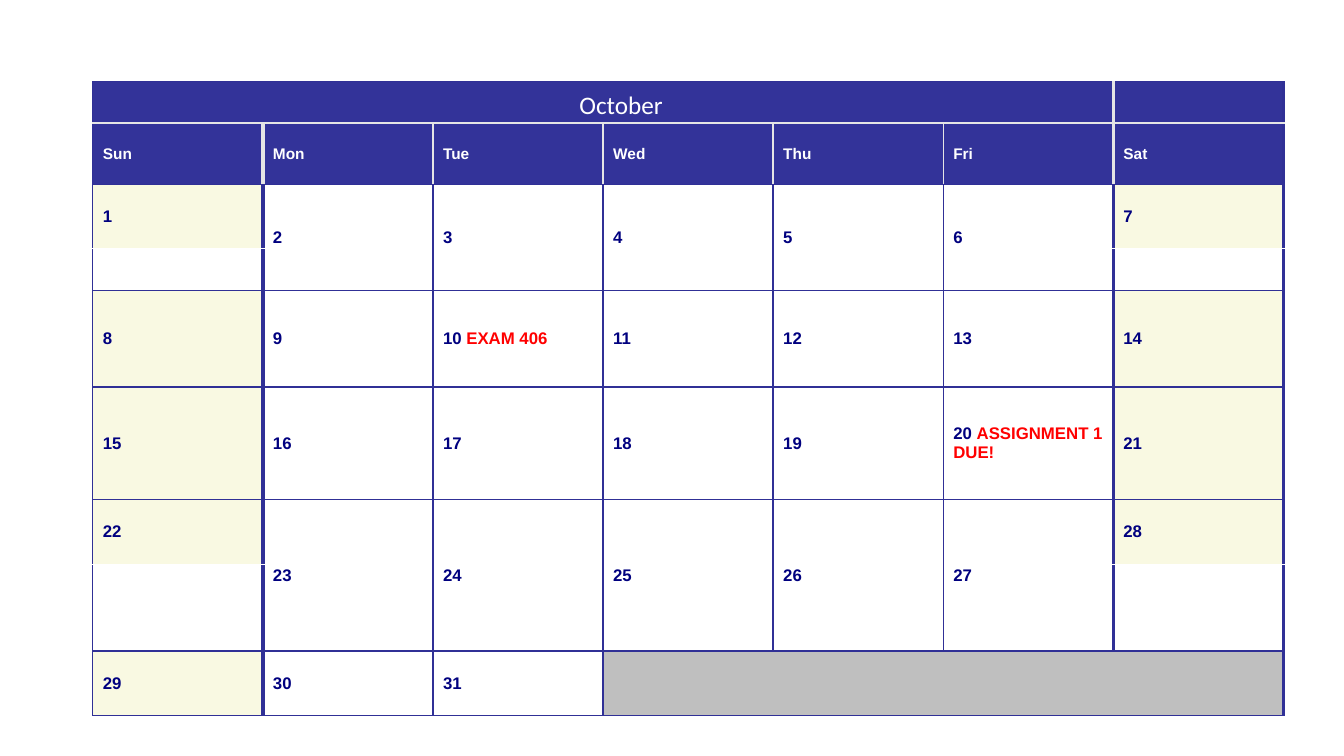
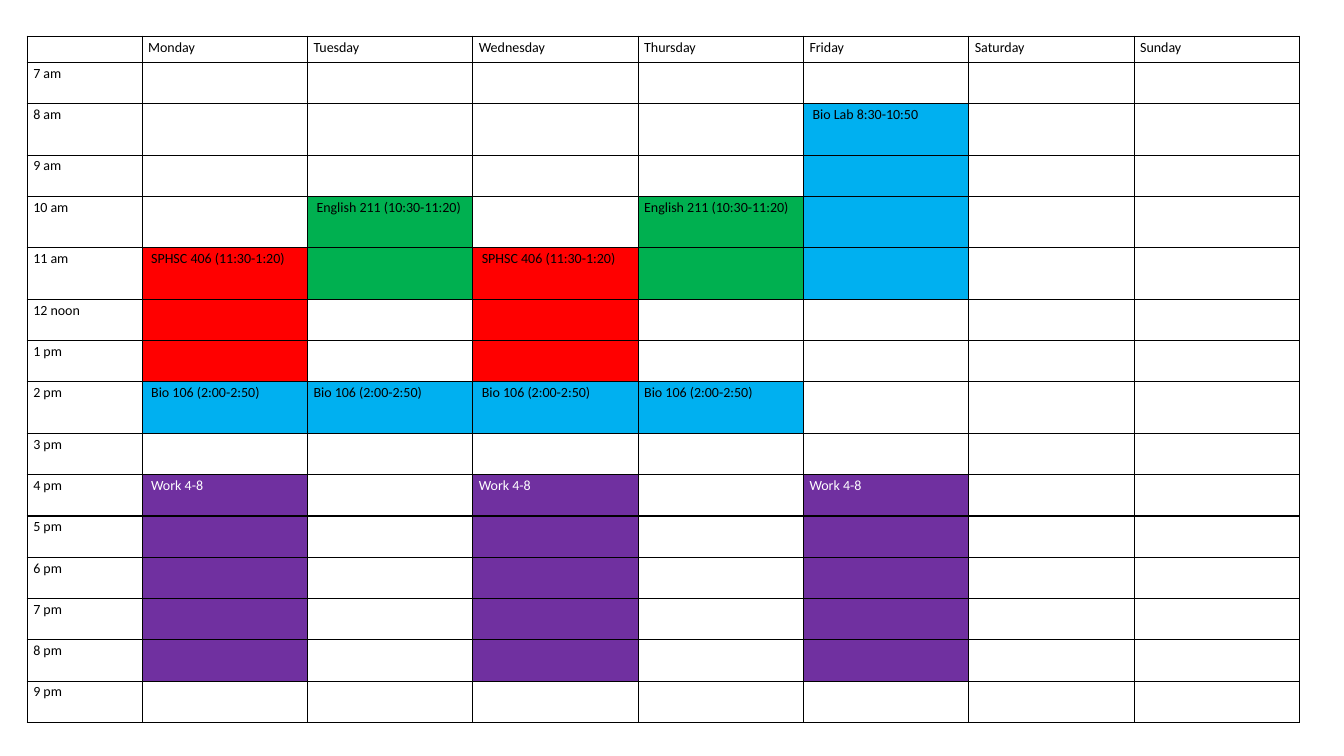
from dataclasses import dataclass
from itertools import product
from typing import NamedTuple

from lxml.etree import SubElement
from pptx import Presentation
from pptx.dml.color import RGBColor
from pptx.enum.text import MSO_ANCHOR as Anchor, PP_ALIGN as Align
from pptx.oxml import parse_xml
from pptx.oxml.ns import nsdecls, qn
from pptx.util import Inches, Pt

NAVY, HEADER, INK = "303096", "333399", "00007F"
PALE, GRAY, CREAM = "E5E5E5", "BFBFBF", "F9F9E2"
WHITE, BLACK, RED = "FFFFFF", "000000", "FF0000"
BLUE, GREEN, PURPLE = "00B0F0", "00B050", "7030A0"

DAY_NAMES = ["Sun", "Mon", "Tue", "Wed", "Thu", "Fri", "Sat"]
CALENDAR_HEIGHTS = [0.41, 0.61, 0.64, 0.41, 0.96, 1.12, 0.64, 0.86, 0.64]
CALENDAR_EDGES = [1.08, 3.6, 1.08, 1.08, 1.08, 1.08, 1.93, 2.52]
WEEK_ROWS = [2, 4, 5, 6, 8]
SPLIT_ROWS = [2, 6]
LAST_DAY = 31
DEADLINES = {10: "EXAM 406", 20: "ASSIGNMENT 1 DUE!"}

WEEK = ["Monday", "Tuesday", "Wednesday", "Thursday", "Friday", "Saturday", "Sunday"]
HOURS = ["7 am", "8 am", "9 am", "10 am", "11 am", "12 noon", "1 pm", "2 pm",
         "3 pm", "4 pm", "5 pm", "6 pm", "7 pm", "8 pm", "9 pm"]
TALL_HOURS = ["8 am", "10 am", "11 am", "2 pm"]


class Edge(NamedTuple):
    color: str
    width: float


@dataclass
class Style:
    size: float
    color: str
    name: str = "Arial"
    bold: bool = False


@dataclass
class Event:
    label: str
    days: list[str]
    start: str
    hours: int
    fill: str
    indented: list[str]
    ink: str = BLACK


EVENTS = [
    Event("Bio Lab 8:30-10:50", ["Friday"], "8 am", 4, BLUE, ["Friday"]),
    Event("English 211 (10:30-11:20)", ["Tuesday", "Thursday"], "10 am", 2, GREEN,
          ["Tuesday"]),
    Event("SPHSC 406 (11:30-1:20)", ["Monday", "Wednesday"], "11 am", 3, RED,
          ["Monday", "Wednesday"]),
    Event("Bio 106 (2:00-2:50)", WEEK[:4], "2 pm", 1, BLUE, ["Monday", "Wednesday"]),
    Event("Work 4-8", ["Monday", "Wednesday", "Friday"], "4 pm", 5, PURPLE,
          ["Monday"], WHITE),
]


def rgb(color: str) -> RGBColor:
    return RGBColor.from_string(color)


def add_run(p, text: str, style: Style) -> None:
    r = p.add_run()
    r.text = text
    values = {"size": Pt(style.size), "name": style.name, "bold": style.bold}
    for key, value in values.items():
        setattr(r.font, key, value)
    r.font.color.rgb = rgb(style.color)


def fill_cell(cell, color: str) -> None:
    cell.fill.solid()
    cell.fill.fore_color.rgb = rgb(color)


def set_borders(cell, left: Edge, right: Edge, top: Edge, bottom: Edge) -> None:
    tc_pr = cell._tc.get_or_add_tcPr()
    sides = {"lnL": left, "lnR": right, "lnT": top, "lnB": bottom}
    for i, (tag, edge) in enumerate(sides.items()):
        tc_pr.insert(i, parse_xml(
            f'<a:{tag} {nsdecls("a")} w="{Pt(edge.width)}"><a:solidFill>'
            f'<a:srgbClr val="{edge.color}"/></a:solidFill></a:{tag}>'))


def add_grid(s, left: float, top: float, widths: list[float], heights: list[float]):
    """Add a plain white table without banding."""
    frame = s.shapes.add_table(len(heights), len(widths), Inches(left), Inches(top),
                               Inches(sum(widths)), Inches(sum(heights)))
    table = frame.table
    table.first_row = table.horz_banding = False
    for column, width in zip(table.columns, widths):
        column.width = Inches(width)
    for row, height in zip(table.rows, heights):
        row.height = Inches(height)
    for cell in table.iter_cells():
        fill_cell(cell, WHITE)
    return table


def shrink_empty_cells(table) -> None:
    """Keep the default text size of empty cells from stretching their rows."""
    for cell in table.iter_cells():
        if not cell.text_frame.text:
            SubElement(cell.text_frame.paragraphs[0]._p, qn("a:endParaRPr"), sz="1000")


def calendar_vertical(row: int, line: int) -> Edge:
    inside_header = row < 2 and 0 < line < len(DAY_NAMES)
    return Edge(PALE if inside_header else NAVY, CALENDAR_EDGES[line])


def calendar_horizontal(line: int, col: int) -> Edge:
    if line == 1:
        return Edge(PALE, 0.96)
    if line - 1 in SPLIT_ROWS and col in (0, 6):
        return Edge(WHITE, 0.75)
    return Edge(NAVY, 0.97)


def border_calendar(table) -> None:
    for row, col in product(range(len(table.rows)), range(len(table.columns))):
        cell = table.cell(row, col)
        if cell.is_spanned:
            continue
        rows, cols = (cell.span_height, cell.span_width) if cell.is_merge_origin else (1, 1)
        set_borders(cell, calendar_vertical(row, col), calendar_vertical(row, col + cols),
                    calendar_horizontal(row, col), calendar_horizontal(row + rows, col))


def build_calendar(s) -> None:
    table = add_grid(s, 0.92, 0.81, [11.81 / 7] * 7, CALENDAR_HEIGHTS)
    table.cell(0, 0).merge(table.cell(0, 5))
    table.cell(8, 3).merge(table.cell(8, 6))
    for row, col in product(SPLIT_ROWS, range(1, 6)):
        table.cell(row, col).merge(table.cell(row + 1, col))

    for col, name in enumerate(DAY_NAMES):
        fill_cell(table.cell(0, col), HEADER)
        cell = table.cell(1, col)
        fill_cell(cell, HEADER)
        cell.vertical_anchor = Anchor.MIDDLE
        add_run(cell.text_frame.paragraphs[0], name, Style(11, WHITE, bold=True))

    for day in range(1, LAST_DAY + 1):
        week, col = divmod(day - 1, 7)
        cell = table.cell(WEEK_ROWS[week], col)
        cell.vertical_anchor = Anchor.MIDDLE
        if col in (0, 6):
            fill_cell(cell, CREAM)
        p = cell.text_frame.paragraphs[0]
        note = DEADLINES.get(day)
        add_run(p, f"{day} " if note else str(day), Style(12, INK, bold=True))
        if note:
            add_run(p, note, Style(12, RED, bold=True))
    fill_cell(table.cell(8, 3), GRAY)
    border_calendar(table)
    shrink_empty_cells(table)

    tf = s.shapes.add_textbox(Inches(4.66), Inches(0.84), Inches(3), Inches(0.4)).text_frame
    tf.word_wrap = True
    p = tf.paragraphs[0]
    p.alignment = Align.CENTER
    add_run(p, "October", Style(18, WHITE, "Calibri"))


def write_entry(cell, text: str, color: str = BLACK) -> None:
    p = cell.text_frame.paragraphs[0]
    p.line_spacing = 1.15
    add_run(p, text, Style(10, color, "Calibri"))


def build_schedule(s) -> None:
    heights = [0.26] + [0.51 if hour in TALL_HOURS else 0.41 for hour in HOURS]
    table = add_grid(s, 0.27, 0.36, [1.14] + [1.64] * len(WEEK), heights)
    margins = {"margin_left": 0.06, "margin_right": 0.06,
               "margin_top": 0, "margin_bottom": 0}
    for cell in table.iter_cells():
        for key, value in margins.items():
            setattr(cell, key, Inches(value))
        set_borders(cell, *[Edge(BLACK, 1)] * 4)

    for col, day in enumerate(WEEK, 1):
        write_entry(table.cell(0, col), day)
    for row, hour in enumerate(HOURS, 1):
        write_entry(table.cell(row, 0), hour)

    for event in EVENTS:
        first = HOURS.index(event.start) + 1
        for day in event.days:
            col = WEEK.index(day) + 1
            for row in range(first, first + event.hours):
                fill_cell(table.cell(row, col), event.fill)
            cell = table.cell(first, col)
            if day in event.indented:
                cell.margin_left = Inches(0.09)
            write_entry(cell, event.label, event.ink)
    shrink_empty_cells(table)


def main() -> None:
    prs = Presentation()
    prs.slide_width, prs.slide_height = Inches(13.33), Inches(7.5)
    for build in (build_calendar, build_schedule):
        build(prs.slides.add_slide(prs.slide_layouts[6]))
    prs.save("out.pptx")


if __name__ == "__main__":
    main()
